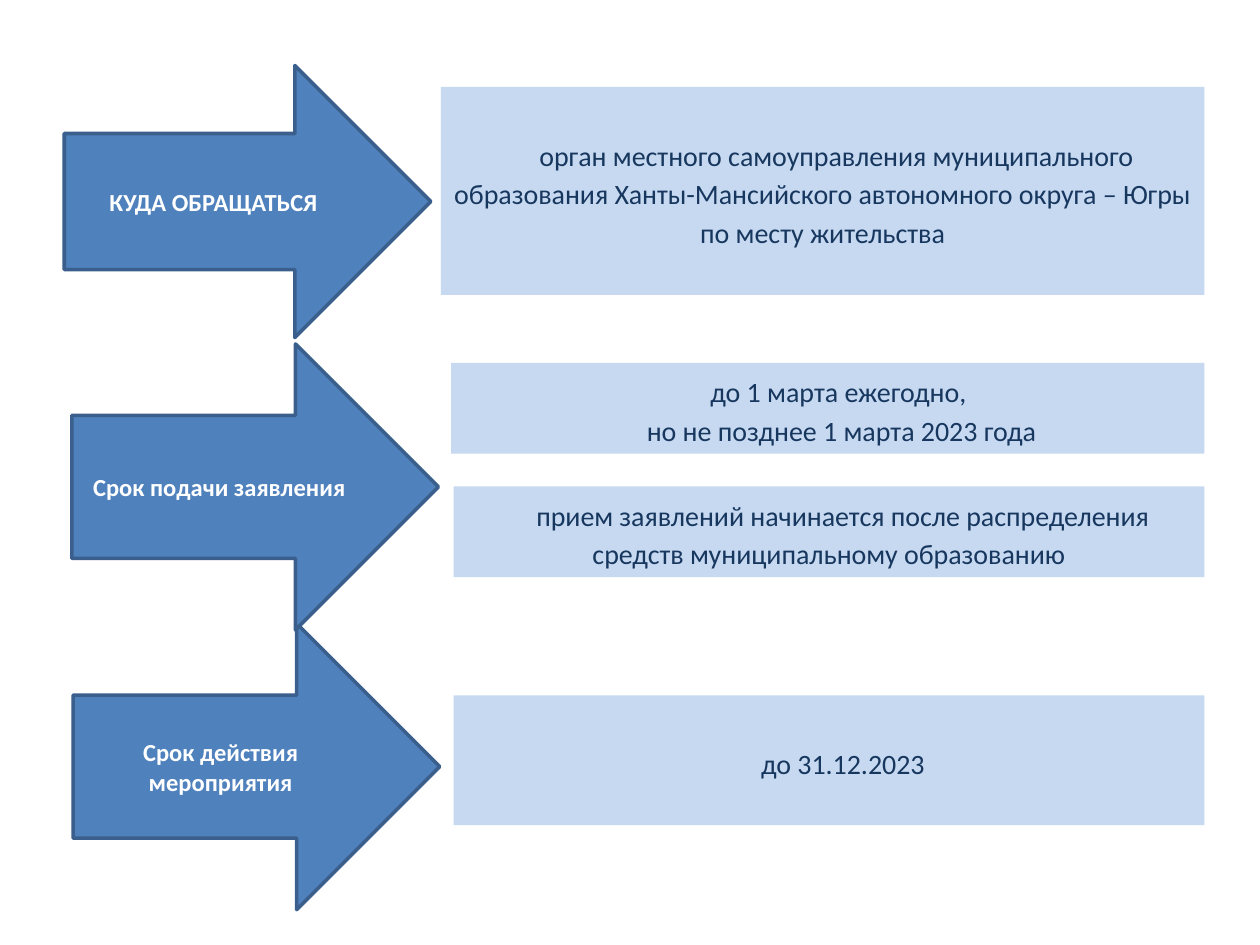
from pptx import Presentation
from pptx.dml.color import RGBColor
from pptx.enum.shapes import MSO_SHAPE
from pptx.enum.text import MSO_ANCHOR, PP_ALIGN
from pptx.util import Inches, Pt

BLUE = RGBColor(0x4F, 0x81, 0xBD)
EDGE = RGBColor(0x3A, 0x5F, 0x8C)
PALE = RGBColor(0xC6, 0xD9, 0xF1)
NAVY = RGBColor(0x17, 0x37, 0x5E)
WHITE = RGBColor(0xFF, 0xFF, 0xFF)


class Deck:
    """Hold the style and the current slide."""

    font = "Calibri"
    right = 9.56

    def __init__(self, show):
        self.slide = show.slides.add_slide(show.slide_layouts[6])

    def shape(self, kind, place, fill):
        shape = self.slide.shapes.add_shape(kind, *map(Inches, place))
        shape.shadow.inherit = False
        shape.fill.solid()
        shape.fill.fore_color.rgb = fill
        shape.text_frame.word_wrap = True
        shape.text_frame.vertical_anchor = MSO_ANCHOR.MIDDLE
        return shape

    def label(self, para, text, size, color, bold=False):
        para.alignment = PP_ALIGN.CENTER
        run = para.add_run()
        run.text = text
        run.font.name = self.font
        run.font.size = Pt(size)
        run.font.bold = bold
        run.font.color.rgb = color

    def arrow(self, left, top, high, text):
        shape = self.shape(MSO_SHAPE.RIGHT_ARROW, (left, top, 2.91, high), BLUE)
        shape.line.color.rgb = EDGE
        shape.line.width = Pt(2)
        self.label(shape.text_frame.paragraphs[0], text, 14, WHITE, True)

    def panel(self, left, top, high, *lines):
        place = left, top, self.right - left, high
        shape = self.shape(MSO_SHAPE.RECTANGLE, place, PALE)
        shape.line.fill.background()
        frame = shape.text_frame
        for i, text in enumerate(lines):
            para = frame.add_paragraph() if i else frame.paragraphs[0]
            self.label(para, text, 16, NAVY)
            para.line_spacing = 1.15
            props = para._p.get_or_add_pPr()
            props.set("marL", "0")
            props.set("indent", str(Inches(0.22)))


def main():
    show = Presentation()
    show.slide_width, show.slide_height = Inches(10), Inches(7.5)
    deck = Deck(show)
    deck.arrow(0.58, 4.95, 2.27, "Срок действия мероприятия")
    deck.arrow(0.51, 0.52, 2.16, "КУДА ОБРАЩАТЬСЯ")
    deck.arrow(0.57, 2.73, 2.27, "Срок подачи заявления")
    deck.panel(3.5, 0.69, 1.65,
               "орган местного самоуправления муниципального образования "
               "Ханты-Мансийского автономного округа – Югры по месту жительства")
    deck.panel(3.58, 2.88, 0.72,
               "до 1 марта ежегодно, ", "но не позднее 1 марта 2023 года")
    deck.panel(3.6, 3.86, 0.72,
               "прием заявлений начинается после распределения "
               "средств муниципальному образованию")
    deck.panel(3.6, 5.52, 1.03, "до 31.12.2023")
    show.save("out.pptx")


if __name__ == "__main__":
    main()
